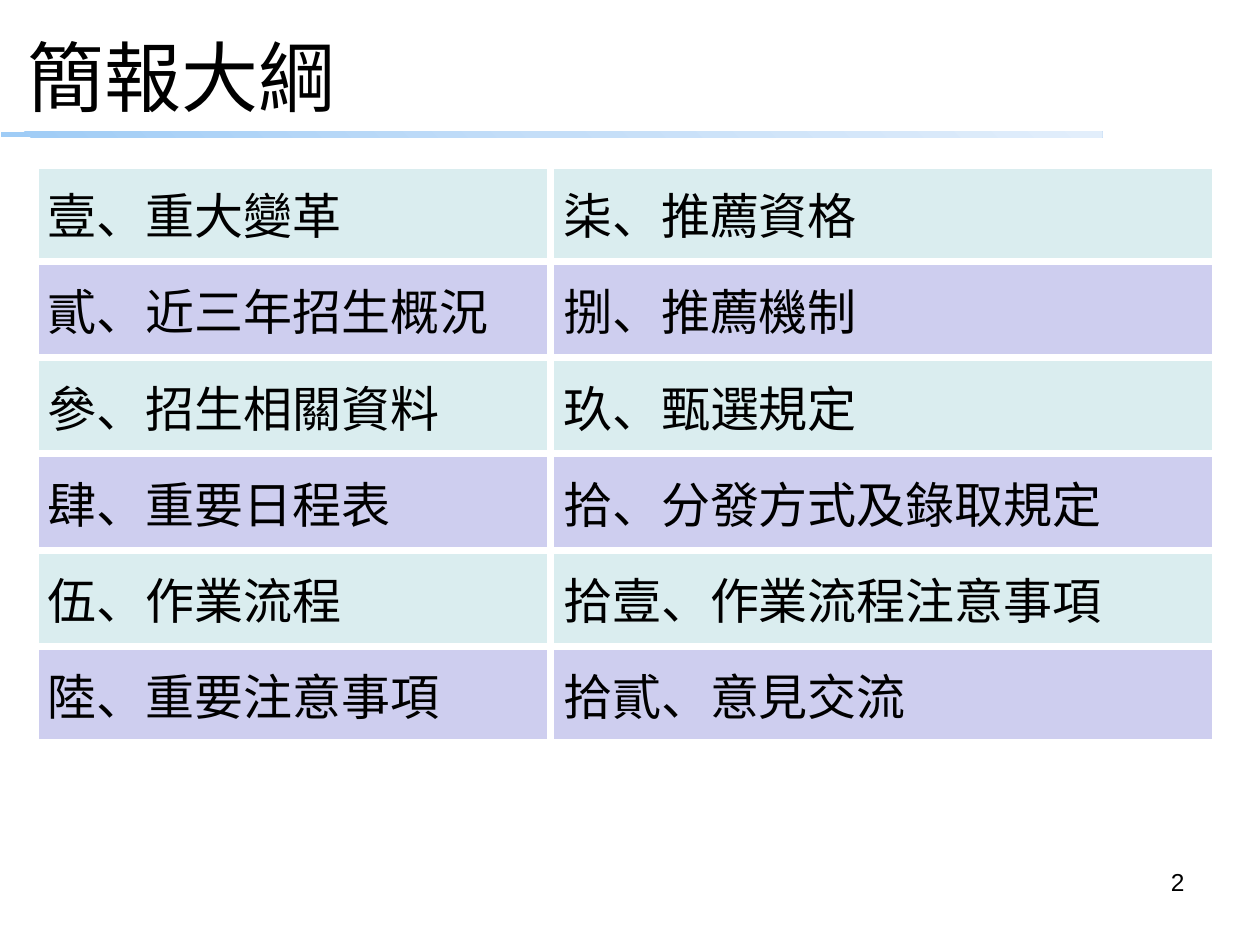
import copy

import pptx
import pptx.dml.color
import pptx.enum.shapes
import pptx.enum.text
import pptx.oxml
import pptx.oxml.ns
import pptx.util
from pptx.dml.color import RGBColor
from pptx.util import Cm, Pt

TITLE = "簡報大綱"
PAGE_NUMBER = "2"
OUTLINE = [
    ("壹、重大變革", "柒、推薦資格"),
    ("貳、近三年招生概況", "捌、推薦機制"),
    ("參、招生相關資料", "玖、甄選規定"),
    ("肆、重要日程表", "拾、分發方式及錄取規定"),
    ("伍、作業流程", "拾壹、作業流程注意事項"),
    ("陸、重要注意事項", "拾貳、意見交流"),
]
COLUMN_WIDTHS = (Cm(10.39), Cm(13.41))
ROW_HEIGHT = Cm(1.94)
INDENT = Cm(1.98)

BLACK = RGBColor(0x00, 0x00, 0x00)
ROW_FILLS = (RGBColor(0xDA, 0xED, 0xEF), RGBColor(0xCE, 0xCE, 0xEF))
RULE_STOPS = (
    (0, RGBColor(0x9F, 0xCC, 0xF6)),
    (0.5, RGBColor(0xC4, 0xDE, 0xF8)),
    (1, RGBColor(0xE2, 0xEE, 0xFB)),
)
TITLE_FONT = "Noto Sans CJK JP"
TABLE_FONT = "Noto Sans CJK SC"
NS = pptx.oxml.ns.nsdecls("a")


def write(tf, text, size, font):
    """Fill the first paragraph, setting both Latin and East Asian fonts."""
    p = tf.paragraphs[0]
    p.text = text
    p.font.size = Pt(size)
    p.font.color.rgb = BLACK
    p.font.name = font
    p.font._element.append(pptx.oxml.parse_xml(f'<a:ea {NS} typeface="{font}"/>'))
    return p


def add_rule(s):
    rule = s.shapes.add_shape(
        pptx.enum.shapes.MSO_SHAPE.RECTANGLE, Cm(0.02), Cm(2.66), Cm(22.2), Cm(0.11))
    rule.shadow.inherit = False
    rule.line.fill.background()
    rule.fill.gradient()
    rule.fill.gradient_angle = 45
    first = rule.fill.gradient_stops[0]._gs
    first.addnext(copy.deepcopy(first))
    for stop, (position, color) in zip(rule.fill.gradient_stops, RULE_STOPS):
        stop.position = position
        stop.color.rgb = color


def add_title(s):
    title = s.shapes.title
    title.left, title.top, title.width, title.height = Cm(0.3), Cm(0.33), Cm(22.4), Cm(2.39)
    tf = title.text_frame
    tf.auto_size = pptx.enum.text.MSO_AUTO_SIZE.NONE
    tf.vertical_anchor = pptx.enum.text.MSO_ANCHOR.MIDDLE
    write(tf, TITLE, 44, TITLE_FONT).alignment = pptx.enum.text.PP_ALIGN.LEFT


def add_page_number(s):
    tf = s.shapes.add_textbox(Cm(18.21), Cm(17.35), Cm(5.92), Cm(1.32)).text_frame
    tf.word_wrap = True
    write(tf, PAGE_NUMBER, 14, "Arial").alignment = pptx.enum.text.PP_ALIGN.RIGHT


def set_borders(cell):
    tcPr = cell._tc.get_or_add_tcPr()
    for i, side in enumerate(("lnL", "lnR", "lnT", "lnB")):
        tcPr.insert(i, pptx.oxml.parse_xml(
            f'<a:{side} {NS} w="{Pt(4.5)}"><a:solidFill>'
            f'<a:srgbClr val="FFFFFF"/></a:solidFill></a:{side}>'))


def add_outline(s):
    table = s.shapes.add_table(
        len(OUTLINE), len(COLUMN_WIDTHS), Cm(0.71), Cm(3.33),
        sum(COLUMN_WIDTHS), ROW_HEIGHT * len(OUTLINE)).table
    table.first_row = False
    table.horz_banding = False
    for column, width in zip(table.columns, COLUMN_WIDTHS):
        column.width = width
    for r, items in enumerate(OUTLINE):
        table.rows[r].height = ROW_HEIGHT
        for c, text in enumerate(items):
            cell = table.cell(r, c)
            cell.vertical_anchor = pptx.enum.text.MSO_ANCHOR.MIDDLE
            cell.fill.solid()
            cell.fill.fore_color.rgb = ROW_FILLS[r % 2]
            set_borders(cell)
            pPr = write(cell.text_frame, text, 28, TABLE_FONT)._p.get_or_add_pPr()
            pPr.set("marL", str(INDENT))
            pPr.set("indent", str(-INDENT))


def main():
    prs = pptx.Presentation()
    prs.slide_width, prs.slide_height = Cm(25.4), Cm(19.05)
    s = prs.slides.add_slide(prs.slide_layouts.get_by_name("Title Only"))
    add_rule(s)
    add_page_number(s)
    add_title(s)
    add_outline(s)
    prs.save("out.pptx")


if __name__ == "__main__":
    main()
